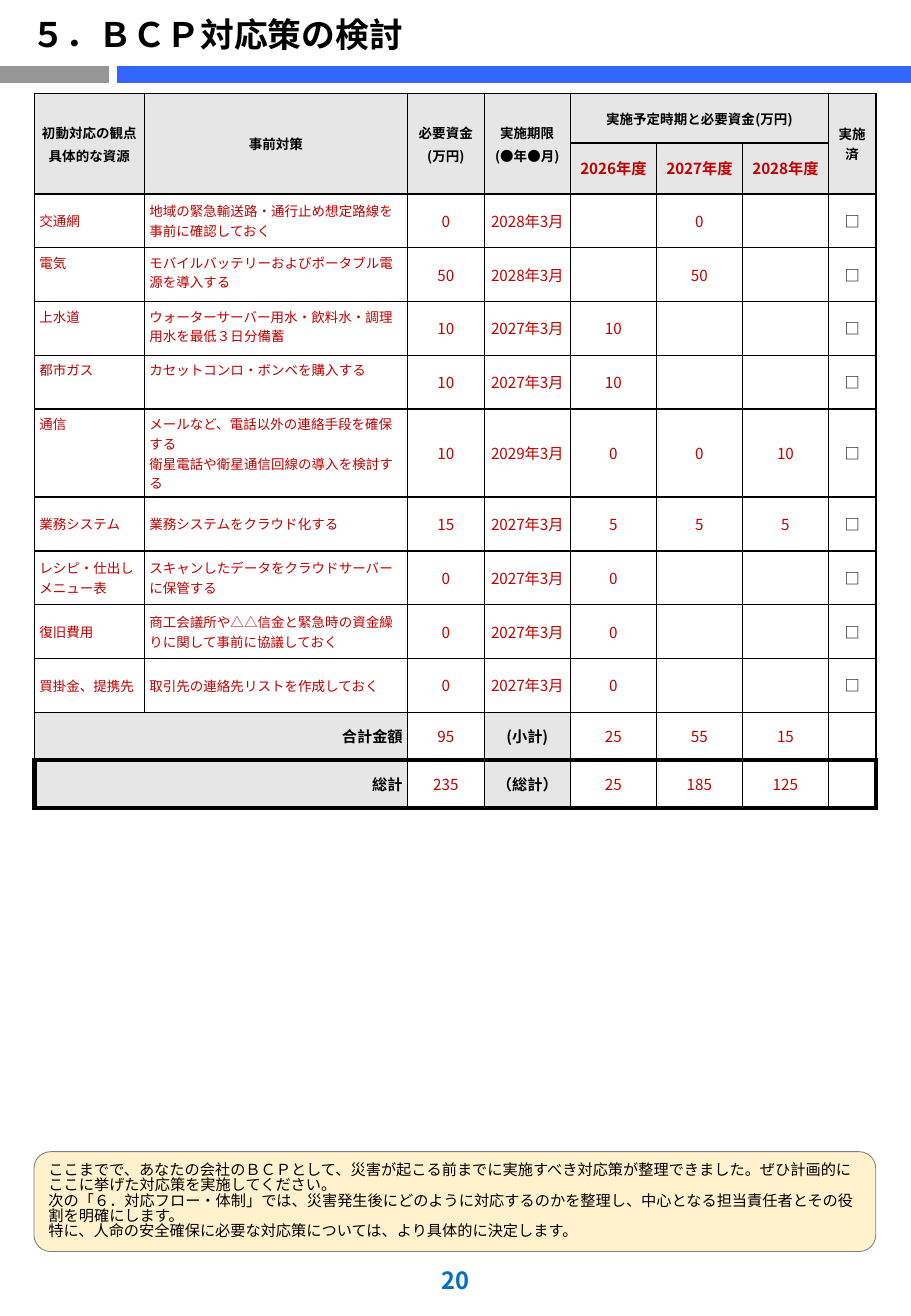
from dataclasses import dataclass

from lxml import etree
from pptx import Presentation
from pptx.dml.color import RGBColor
from pptx.enum.shapes import MSO_CONNECTOR, MSO_SHAPE
from pptx.enum.text import MSO_ANCHOR, PP_ALIGN
from pptx.oxml.ns import qn
from pptx.util import Pt

STRAIGHT = MSO_CONNECTOR.STRAIGHT
ROUNDED = MSO_SHAPE.ROUNDED_RECTANGLE
TOP, MIDDLE, BOTTOM = MSO_ANCHOR.TOP, MSO_ANCHOR.MIDDLE, MSO_ANCHOR.BOTTOM
LEFT, CENTER, RIGHT = PP_ALIGN.LEFT, PP_ALIGN.CENTER, PP_ALIGN.RIGHT


@dataclass(frozen=True)
class Theme:
    font: str = "Noto Sans CJK JP"
    black: str = "000000"
    entry: str = "C00000"
    header: str = "E7E6E6"
    gray_bar: str = "969696"
    blue_bar: str = "3366FF"
    page: str = "0070C0"
    note: str = "FFF2CC"
    note_line: str = "808080"
    title_size: int = 20
    page_size: int = 14
    body_size: int = 9
    label_size: int = 8


theme = Theme()


def write(frame, text, size, color=theme.black, bold=False, align=LEFT, gap=0, spacing=None):
    """Fill a text frame, one paragraph per line; gap is the space between them."""
    frame.word_wrap = True
    frame.text = text
    for index, paragraph in enumerate(frame.paragraphs):
        paragraph.alignment = align
        if spacing:
            paragraph.line_spacing = spacing
        if index and gap:
            paragraph.space_before = Pt(gap)
        font = paragraph.font
        font.size, font.bold, font.name = Pt(size), bold, theme.font
        font.color.rgb = RGBColor.from_string(color)
        latin = font._element.find(qn("a:latin"))
        east_asian = etree.Element(qn("a:ea"), typeface=theme.font)
        latin.addnext(east_asian)


def set_borders(cell, widths):
    """Draw black borders in the order left, right, top, bottom."""
    properties = cell._tc.get_or_add_tcPr()
    for side, width in zip("LRTB", widths):
        border = etree.SubElement(properties, qn(f"a:ln{side}"), w=str(Pt(width)))
        fill = etree.SubElement(border, qn("a:solidFill"))
        etree.SubElement(fill, qn("a:srgbClr"), val=theme.black)


presentation = Presentation()
presentation.slide_width, presentation.slide_height = Pt(540), Pt(779.76)
slide = presentation.slides.add_slide(presentation.slide_layouts[6])
shapes = slide.shapes

# Title and its two-coloured rule
for start, end, bar_color in ((0, 64.8, theme.gray_bar), (69.12, 540, theme.blue_bar)):
    bar = shapes.add_connector(STRAIGHT, Pt(start), Pt(43.92), Pt(end), Pt(43.92))
    bar.line.width = Pt(10)
    bar.line.color.rgb = RGBColor.from_string(bar_color)
    etree.SubElement(bar._element.spPr, qn("a:effectLst"))

title = shapes.add_textbox(Pt(11.52), Pt(2.88), Pt(516.24), Pt(33.12)).text_frame
title.vertical_anchor = BOTTOM
write(title, "５．ＢＣＰ対応策の検討", theme.title_size, bold=True)

# Table of measures
headings = [
    ["初動対応の観点\n具体的な資源", "事前対策", "必要資金\n(万円)", "実施期限\n(●年●月)",
     "実施予定時期と必要資金(万円)", "", "", "実施済"],
    ["", "", "", "", "2026年度", "2027年度", "2028年度", ""],
]
measures = [
    ["交通網", "地域の緊急輸送路・通行止め想定路線を事前に確認しておく",
     "0", "2028年3月", "", "0", "", "□"],
    ["電気", "モバイルバッテリーおよびポータブル電源を導入する",
     "50", "2028年3月", "", "50", "", "□"],
    ["上水道", "ウォーターサーバー用水・飲料水・調理用水を最低３日分備蓄",
     "10", "2027年3月", "10", "", "", "□"],
    ["都市ガス", "カセットコンロ・ボンベを購入する",
     "10", "2027年3月", "10", "", "", "□"],
    ["通信", "メールなど、電話以外の連絡手段を確保する\n衛星電話や衛星通信回線の導入を検討する",
     "10", "2029年3月", "0", "0", "10", "□"],
    ["業務システム", "業務システムをクラウド化する",
     "15", "2027年3月", "5", "5", "5", "□"],
    ["レシピ・仕出しメニュー表", "スキャンしたデータをクラウドサーバーに保管する",
     "0", "2027年3月", "0", "", "", "□"],
    ["復旧費用", "商工会議所や△△信金と緊急時の資金繰りに関して事前に協議しておく",
     "0", "2027年3月", "0", "", "", "□"],
    ["買掛金、提携先", "取引先の連絡先リストを作成しておく",
     "0", "2027年3月", "0", "", "", "□"],
]
totals = [
    ["合計金額", "", "95", "(小計)", "25", "55", "15", ""],
    ["総計", "", "235", "（総計）", "25", "185", "125", ""],
]
rows = headings + measures + totals
column_widths = [65.2, 155.9, 45.6, 51, 51, 51, 51, 28.1]
row_heights = [29.3, 30.2] + [31.9] * 4 + [52.1] + [31.9] * 4 + [28.4] * 2
first_total, last_row, last_column = len(rows) - 2, len(rows) - 1, len(column_widths) - 1
top_aligned = {(3, 0), (3, 1), (4, 0), (4, 1), (5, 0), (5, 1), (6, 0)}

plan = shapes.add_table(len(rows), len(column_widths), Pt(20.4), Pt(55.4),
                        Pt(sum(column_widths)), Pt(sum(row_heights))).table
plan.first_row = plan.horz_banding = False
for column, width in zip(plan.columns, column_widths):
    column.width = Pt(width)
for row, height in zip(plan.rows, row_heights):
    row.height = Pt(height)

for r, texts in enumerate(rows):
    is_heading, is_total = r < len(headings), r >= first_total
    for c, text in enumerate(texts):
        cell = plan.cell(r, c)
        cell.margin_left = cell.margin_right = Pt(2.88)
        cell.margin_top = cell.margin_bottom = Pt(2.88)
        cell.vertical_anchor = TOP if (r, c) in top_aligned else MIDDLE
        set_borders(cell, (
            3 if r == last_row and c == 0 else 1,
            3 if r == last_row and c == last_column else 1,
            3 if r == last_row else 1,
            3 if is_total else 1,
        ))
        is_caption = is_heading or (is_total and c in (0, 1, 3))
        if is_caption:
            cell.fill.solid()
            cell.fill.fore_color.rgb = RGBColor.from_string(theme.header)
        else:
            cell.fill.background()
        is_year = r == 1
        is_small = r == 0 or (not is_heading and not is_total and c < 2)
        is_black = (is_caption and not is_year) or c == last_column
        align = CENTER if is_heading or c > 1 else RIGHT if is_total else LEFT
        write(cell.text_frame, text,
              theme.label_size if is_small else theme.body_size,
              theme.black if is_black else theme.entry,
              is_caption, align, gap=2 if is_heading else 0)

plan.cell(0, last_column)._tc.get_or_add_tcPr().set("vert", "eaVert")
for c in (0, 1, 2, 3, last_column):
    plan.cell(0, c).merge(plan.cell(1, c))
plan.cell(0, 4).merge(plan.cell(0, 6))
for r in (first_total, last_row):
    plan.cell(r, 0).merge(plan.cell(r, 1))

# Page number and closing note
page_number = shapes.add_textbox(0, Pt(741.6), Pt(540), Pt(28.8)).text_frame
page_number.vertical_anchor = BOTTOM
write(page_number, "20", theme.page_size, theme.page, True, CENTER)

note = shapes.add_shape(ROUNDED, Pt(20.16), Pt(682.4), Pt(499), Pt(59.2))
note.shadow.inherit = False
note.fill.solid()
note.fill.fore_color.rgb = RGBColor.from_string(theme.note)
note.line.color.rgb = RGBColor.from_string(theme.note_line)
note.line.width = Pt(0.5)
note_frame = note.text_frame
note_frame.vertical_anchor = MIDDLE
note_frame.margin_left = note_frame.margin_right = Pt(5.76)
note_frame.margin_top = note_frame.margin_bottom = Pt(2.88)
write(note_frame,
      "ここまでで、あなたの会社のＢＣＰとして、災害が起こる前までに実施すべき対応策が整理できました。"
      "ぜひ計画的にここに挙げた対応策を実施してください。\n"
      "次の「６．対応フロー・体制」では、災害発生後にどのように対応するのかを整理し、"
      "中心となる担当責任者とその役割を明確にします。\n"
      "特に、人命の安全確保に必要な対応策については、より具体的に決定します。",
      theme.body_size, spacing=0.83)

presentation.save("out.pptx")
